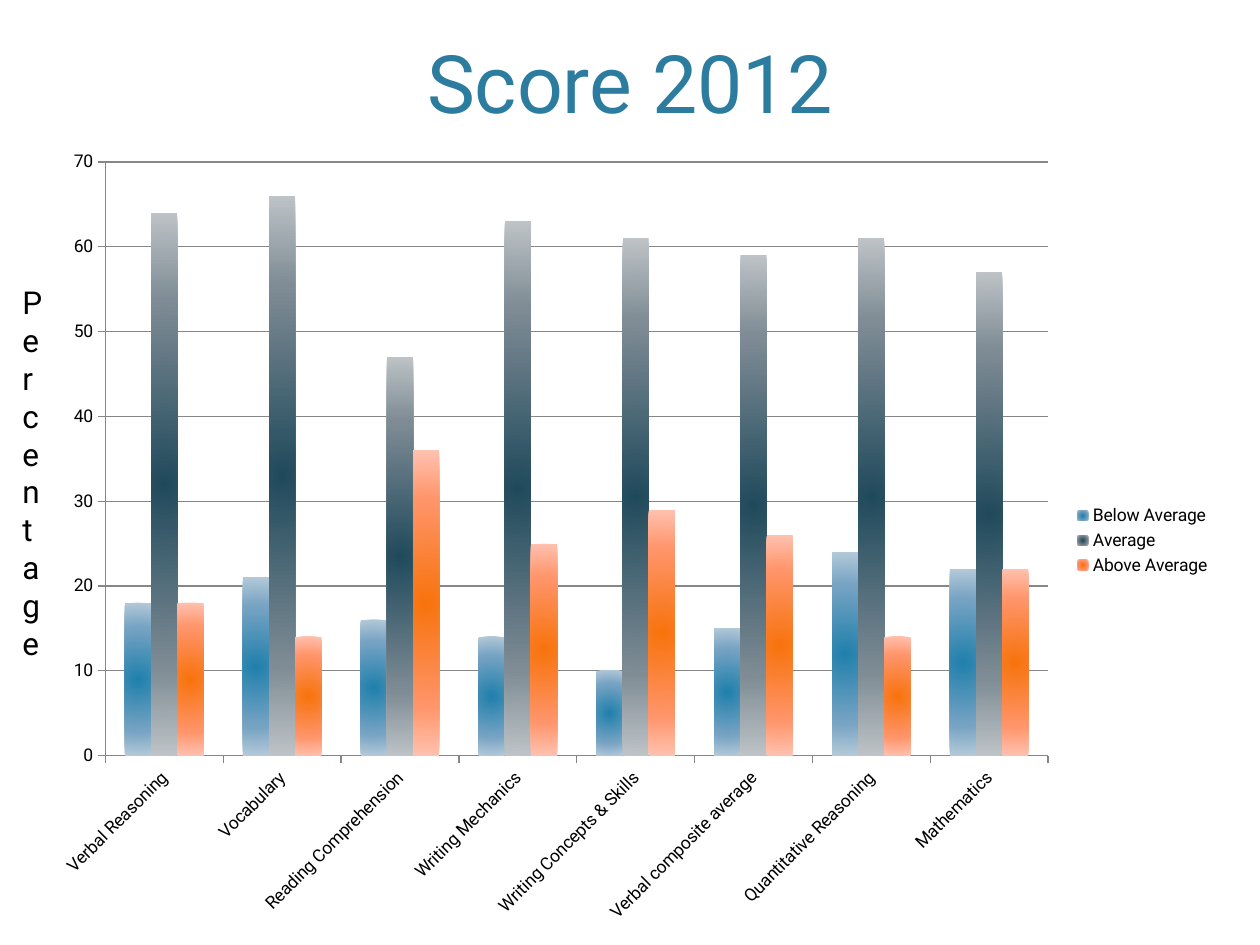
from dataclasses import dataclass

from lxml import etree
from pptx import Presentation
from pptx.chart.data import CategoryChartData
from pptx.dml.color import RGBColor
from pptx.enum.chart import XL_CHART_TYPE as ChartType
from pptx.enum.chart import XL_LEGEND_POSITION as LegendPosition
from pptx.enum.chart import XL_TICK_MARK as TickMark
from pptx.enum.text import MSO_ANCHOR as Anchor
from pptx.enum.text import PP_ALIGN as Align
from pptx.oxml import parse_xml
from pptx.oxml.ns import nsdecls, qn
from pptx.util import Inches, Pt


@dataclass(frozen=True)
class Theme:
    font: str = "Roboto"
    title_color: str = "2C7C9F"
    text_color: str = "000000"
    line_color: str = "868686"
    title_size: int = 46
    label_size: int = 18
    chart_size: int = 10


THEME = Theme()

CATEGORIES = [
    "Verbal Reasoning", "Vocabulary", "Reading Comprehension",
    "Writing Mechanics", "Writing Concepts & Skills",
    "Verbal composite average", "Quantitative Reasoning", "Mathematics",
]

# Name, scores, gradient colours from the centre of a column to its ends
SERIES = [
    ("Below Average", [18, 21, 16, 14, 10, 15, 24, 22],
     ("2080AC", "78A4C4", "B4CAD9")),
    ("Average", [64, 66, 47, 63, 61, 59, 61, 57],
     ("204A5C", "7F8C95", "BDC3C6")),
    ("Above Average", [18, 14, 36, 25, 29, 26, 14, 22],
     ("F7730C", "FF956B", "FFC2B0")),
]


def set_font(font, size, color):
    font.name = THEME.font
    font.size = Pt(size)
    font.color.rgb = RGBColor.from_string(color)


def add_text(slide, text, left, top, width, height, *, size,
             color=THEME.text_color, align=Align.LEFT, anchor=Anchor.TOP):
    shape = slide.shapes.add_textbox(
        Inches(left), Inches(top), Inches(width), Inches(height))
    frame = shape.text_frame
    frame.word_wrap = True
    frame.vertical_anchor = anchor
    paragraph = frame.paragraphs[0]
    paragraph.alignment = align
    run = paragraph.add_run()
    run.text = text
    set_font(run.font, size, color)


def fill_radially(series, colors):
    """Fill the columns with a gradient that spreads from their centre."""
    stops = "".join(
        f'<a:gs pos="{position}"><a:srgbClr val="{color}"/></a:gs>'
        for position, color in zip((0, 68000, 100000), colors))
    series.format.fill.solid()
    properties = series.format.fill._xPr
    gradient = parse_xml(
        f'<a:gradFill {nsdecls("a")} rotWithShape="1"><a:gsLst>{stops}</a:gsLst>'
        '<a:path path="circle"><a:fillToRect l="50000" t="50000" r="50000" '
        'b="50000"/></a:path></a:gradFill>')
    properties.replace(properties.find(qn("a:solidFill")), gradient)


def style_line(line):
    line.color.rgb = RGBColor.from_string(THEME.line_color)
    line.width = Pt(0.75)


def place_plot(chart, **fractions):
    """Fix the inner plot area as fractions of the chart's size."""
    plot_area = chart._chartSpace.find(".//" + qn("c:plotArea"))
    layout = plot_area.find(qn("c:layout"))
    if layout is None:
        layout = etree.Element(qn("c:layout"))
        plot_area.insert(0, layout)
    manual = etree.SubElement(layout, qn("c:manualLayout"))
    settings = {"layoutTarget": "inner", "xMode": "edge", "yMode": "edge",
                **fractions}
    for name, value in settings.items():
        etree.SubElement(manual, qn(f"c:{name}")).set("val", str(value))


def style_axes(chart):
    for axis in (chart.category_axis, chart.value_axis):
        axis.major_tick_mark = TickMark.OUTSIDE
        axis.minor_tick_mark = TickMark.NONE
        style_line(axis.format.line)
    value_axis = chart.value_axis
    value_axis.minimum_scale = 0
    value_axis.maximum_scale = 70
    value_axis.major_unit = 10
    value_axis.has_major_gridlines = True
    style_line(value_axis.major_gridlines.format.line)

    # Slanted category labels
    category_axis = chart.category_axis
    set_font(category_axis.tick_labels.font, THEME.chart_size, THEME.text_color)
    body = category_axis._element.find(qn("c:txPr")).find(qn("a:bodyPr"))
    body.set("rot", "-2700000")
    body.set("vert", "horz")


def add_score_chart(slide, left, top, width, height):
    data = CategoryChartData()
    data.categories = CATEGORIES
    for name, scores, _ in SERIES:
        data.add_series(name, scores)
    chart = slide.shapes.add_chart(
        ChartType.COLUMN_CLUSTERED, Inches(left), Inches(top),
        Inches(width), Inches(height), data).chart
    chart.has_title = False
    set_font(chart.font, THEME.chart_size, THEME.text_color)

    # Columns
    plot = chart.plots[0]
    plot.gap_width = 150
    plot.overlap = 0
    plot.vary_by_categories = False
    for series, (_, _, colors) in zip(plot.series, SERIES):
        fill_radially(series, colors)

    # Axes, legend and plot area
    style_axes(chart)
    chart.has_legend = True
    chart.legend.position = LegendPosition.RIGHT
    chart.legend.include_in_layout = False
    place_plot(chart, x=0.056, y=0.032, w=0.796, h=0.734)


def main():
    presentation = Presentation()
    presentation.slide_width = Inches(10)
    presentation.slide_height = Inches(7.5)
    slide = presentation.slides.add_slide(presentation.slide_layouts[6])

    # Title
    add_text(slide, "Score 2012", 0.6, 0, 8.8, 1.08, size=THEME.title_size,
             color=THEME.title_color, align=Align.CENTER, anchor=Anchor.BOTTOM)
    # Chart
    add_score_chart(slide, 0.31, 1.08, 9.4, 6.42)
    # Axis label: the narrow box wraps after each letter
    add_text(slide, "Percentage", 0.08, 2.2, 0.37, 3.13, size=THEME.label_size)

    presentation.save("out.pptx")


if __name__ == "__main__":
    main()
